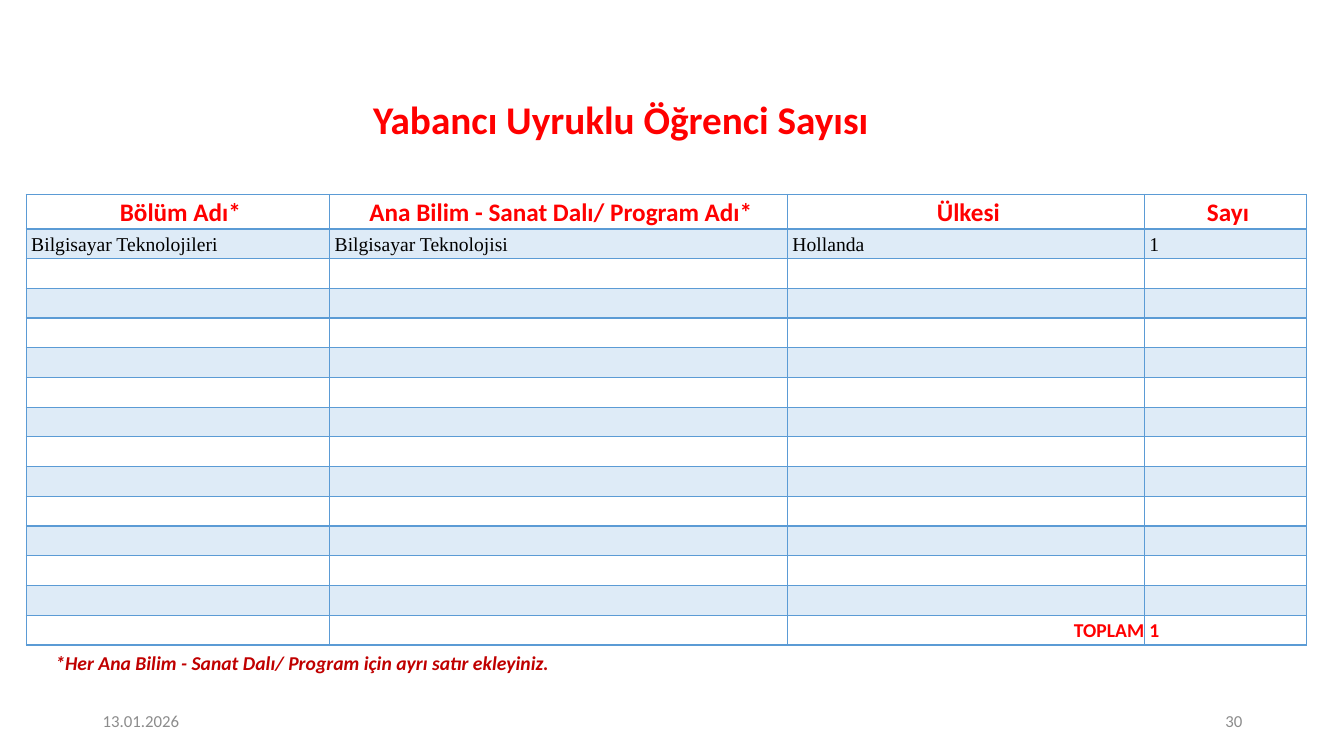
from lxml.etree import SubElement
from pptx import Presentation
from pptx.dml.color import RGBColor
from pptx.enum.text import MSO_ANCHOR as Anchor, PP_ALIGN as Align
from pptx.oxml.ns import qn
from pptx.util import Inches, Pt

RED = RGBColor(0xFF, 0x00, 0x00)
DARK_RED = RGBColor(0xC0, 0x00, 0x00)
GREY = RGBColor(0x8C, 0x8C, 0x8C)
BLACK = RGBColor(0x00, 0x00, 0x00)
BLUE = RGBColor(0x5B, 0x9B, 0xD5)
PALE_BLUE = RGBColor(0xDE, 0xEB, 0xF7)

HEADINGS = ["Bölüm Adı*", "Ana Bilim - Sanat Dalı/ Program Adı*", "Ülkesi", "Sayı"]
STUDENTS = [["Bilgisayar Teknolojileri", "Bilgisayar Teknolojisi", "Hollanda", "1"]]
TOTAL = ["", "", "TOPLAM", "1"]
COLUMN_WIDTHS = [3.01, 4.54, 3.54, 1.61]
ROW_COUNT = 15
HEADER_HEIGHT = 0.34
ROW_HEIGHT = 0.295


def write(frame, text, size, color, font="Calibri", bold=False, italic=False,
          align=Align.LEFT, spacing=None):
    para = frame.paragraphs[0]
    para.alignment = align
    if spacing:
        para.line_spacing = spacing
    span = para.add_run()
    span.text = text
    span.font.name = font
    span.font.size = Pt(size)
    span.font.bold = bold
    span.font.italic = italic
    span.font.color.rgb = color


def add_text(page, left, top, width, height, text, size, color,
             anchor=Anchor.MIDDLE, **style):
    box = page.shapes.add_textbox(Inches(left), Inches(top), Inches(width), Inches(height))
    box.text_frame.word_wrap = True
    box.text_frame.vertical_anchor = anchor
    write(box.text_frame, text, size, color, **style)


def set_borders(cell, top=1, bottom=1):
    properties = cell._tc.get_or_add_tcPr()
    for side, width in (("L", 1), ("R", 1), ("T", top), ("B", bottom)):
        line = SubElement(properties, qn(f"a:ln{side}"), w=str(Pt(width)))
        fill = SubElement(line, qn("a:solidFill"))
        SubElement(fill, qn("a:srgbClr"), val=str(BLUE))


def fill_cell(cell, text, **style):
    """Write the text, or keep an empty cell from stretching its row."""
    cell.vertical_anchor = Anchor.MIDDLE
    cell.margin_left = Inches(0.05)
    cell.margin_right = cell.margin_top = cell.margin_bottom = 0
    if text:
        write(cell.text_frame, text, spacing=1.07, **style)
    else:
        SubElement(cell.text_frame.paragraphs[0]._p, qn("a:endParaRPr"), sz=str(1400))


def add_student_table(page):
    height = HEADER_HEIGHT + ROW_HEIGHT * (ROW_COUNT - 1)
    table = page.shapes.add_table(ROW_COUNT, len(HEADINGS), Inches(0.26), Inches(1.93),
                                  Inches(sum(COLUMN_WIDTHS)), Inches(height)).table
    table.first_row = table.horz_banding = False
    for column, width in zip(table.columns, COLUMN_WIDTHS):
        column.width = Inches(width)

    blank_rows = [[""] * len(HEADINGS)] * (ROW_COUNT - len(STUDENTS) - 2)
    last = ROW_COUNT - 1
    for r, texts in enumerate([HEADINGS, *STUDENTS, *blank_rows, TOTAL]):
        table.rows[r].height = Inches(ROW_HEIGHT if r else HEADER_HEIGHT)
        if r == 0:
            style = dict(size=18, color=RED, bold=True, align=Align.CENTER)
        elif r == last:
            style = dict(size=14, color=RED, bold=True)
        else:
            style = dict(size=14, color=BLACK, font="Times New Roman")
        for c, text in enumerate(texts):
            cell = table.cell(r, c)
            if r == last:
                style["align"] = Align.RIGHT if c == 2 else Align.LEFT
            fill_cell(cell, text, **style)
            set_borders(cell, top=2 if r == 1 else 1, bottom=2 if r == 0 else 1)
            if r % 2:
                cell.fill.solid()
                cell.fill.fore_color.rgb = PALE_BLUE
            else:
                cell.fill.background()


def main():
    deck = Presentation()
    deck.slide_width, deck.slide_height = Inches(13.33), Inches(7.5)
    page = deck.slides.add_slide(deck.slide_layouts[6])
    add_text(page, 0.52, 0.93, 11.27, 0.56, "Yabancı Uyruklu Öğrenci Sayısı", 28, RED,
             bold=True, align=Align.CENTER, spacing=0.9)
    add_student_table(page)
    add_text(page, 0.45, 6.41, 6.37, 0.34,
             "*Her Ana Bilim - Sanat Dalı/ Program için ayrı satır ekleyiniz.", 14, DARK_RED,
             anchor=Anchor.TOP, bold=True, italic=True)
    add_text(page, 0.92, 6.95, 3, 0.4, "13.01.2026", 12, GREY)
    add_text(page, 9.42, 6.95, 3, 0.4, "30", 12, GREY, align=Align.RIGHT)
    deck.save("out.pptx")


if __name__ == "__main__":
    main()
